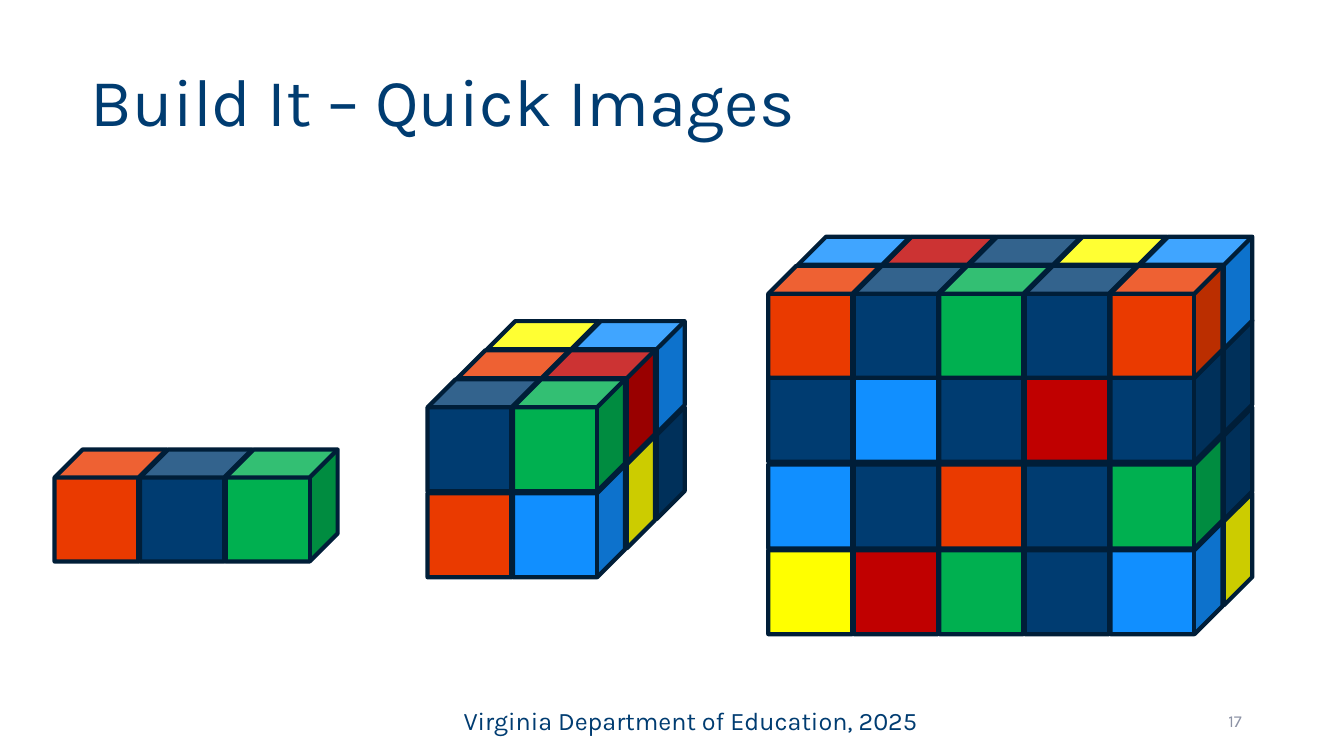
from dataclasses import dataclass, field

from pptx import Presentation
from pptx.dml.color import RGBColor
from pptx.enum.shapes import MSO_SHAPE
from pptx.enum.text import MSO_ANCHOR, PP_ALIGN
from pptx.util import Pt


@dataclass(frozen=True)
class Theme:
    font: str = "Karla"
    text: str = "003C71"
    muted: str = "8C92A5"
    edge: str = "001E38"
    edge_width: float = 3
    title_size: int = 48
    footer_size: int = 18
    number_size: int = 12
    cubes: dict = field(default_factory=lambda: {
        "N": "003C71", "B": "118FFF", "G": "00B050",
        "O": "EA3A00", "R": "C00000", "Y": "FFFF00",
    })


class SlideBuilder:
    CUBE = 80
    STEP = 61.1
    SHIFT = 21.3
    RISE = 20.8

    def __init__(self, prs, theme):
        self.theme = theme
        self.s = prs.slides.add_slide(prs.slide_layouts[6])

    def text(self, box, text, size, color, anchor=MSO_ANCHOR.TOP,
             align=PP_ALIGN.LEFT, margin_left=7.2, spacing=1.0):
        tf = self.s.shapes.add_textbox(*map(Pt, box)).text_frame
        tf.text = text
        tf.word_wrap = True
        tf.vertical_anchor = anchor
        tf.margin_left = Pt(margin_left)
        p = tf.paragraphs[0]
        p.alignment = align
        p.line_spacing = spacing
        r = p.runs[0]
        r.font.name = self.theme.font
        r.font.size = Pt(size)
        r.font.color.rgb = RGBColor.from_string(color)

    def cube(self, group, left, top, color):
        sp = group.shapes.add_shape(
            MSO_SHAPE.CUBE, Pt(left), Pt(top), Pt(self.CUBE), Pt(self.CUBE))
        sp.shadow.inherit = False
        sp.fill.solid()
        sp.fill.fore_color.rgb = RGBColor.from_string(color)
        sp.line.color.rgb = RGBColor.from_string(self.theme.edge)
        sp.line.width = Pt(self.theme.edge_width)

    def solid(self, left, levels):
        group = self.s.shapes.add_group_shape()
        for top, layers in levels:
            for i, layer in enumerate(layers):
                depth = len(layers) - 1 - i
                for col, key in enumerate(layer):
                    self.cube(group,
                              left + col * self.STEP + depth * self.SHIFT,
                              top - depth * self.RISE,
                              self.theme.cubes[key])


SOLIDS = [
    (548.8, [
        (373, ["NNNNY", "YRGNB"]),
        (311.8, ["NNNNN", "BNONG"]),
        (249.8, ["NNNNN", "NBNRN"]),
        (189.9, ["BRNYB", "ONGNO"]),
    ]),
    (305.4, [
        (332.4, ["NN", "NY", "OB"]),
        (271, ["YB", "OR", "NG"]),
    ]),
    (39, [(321.1, ["ONG"])]),
]


def main():
    prs = Presentation()
    prs.slide_width, prs.slide_height = Pt(960), Pt(540)
    theme = Theme()
    slide = SlideBuilder(prs, theme)
    slide.text((324, 500.4, 480, 28.8), "Virginia Department of Education, 2025",
               theme.footer_size, theme.text)
    slide.text((0, 0, 960, 104.4), "Build It – Quick Images", theme.title_size,
               theme.text, MSO_ANCHOR.BOTTOM, margin_left=64.8, spacing=0.9)
    slide.text((678.2, 500.4, 216, 28.8), "17", theme.number_size,
               theme.muted, MSO_ANCHOR.MIDDLE, PP_ALIGN.RIGHT)
    for left, levels in SOLIDS:
        slide.solid(left, levels)
    prs.save("out.pptx")


if __name__ == "__main__":
    main()
